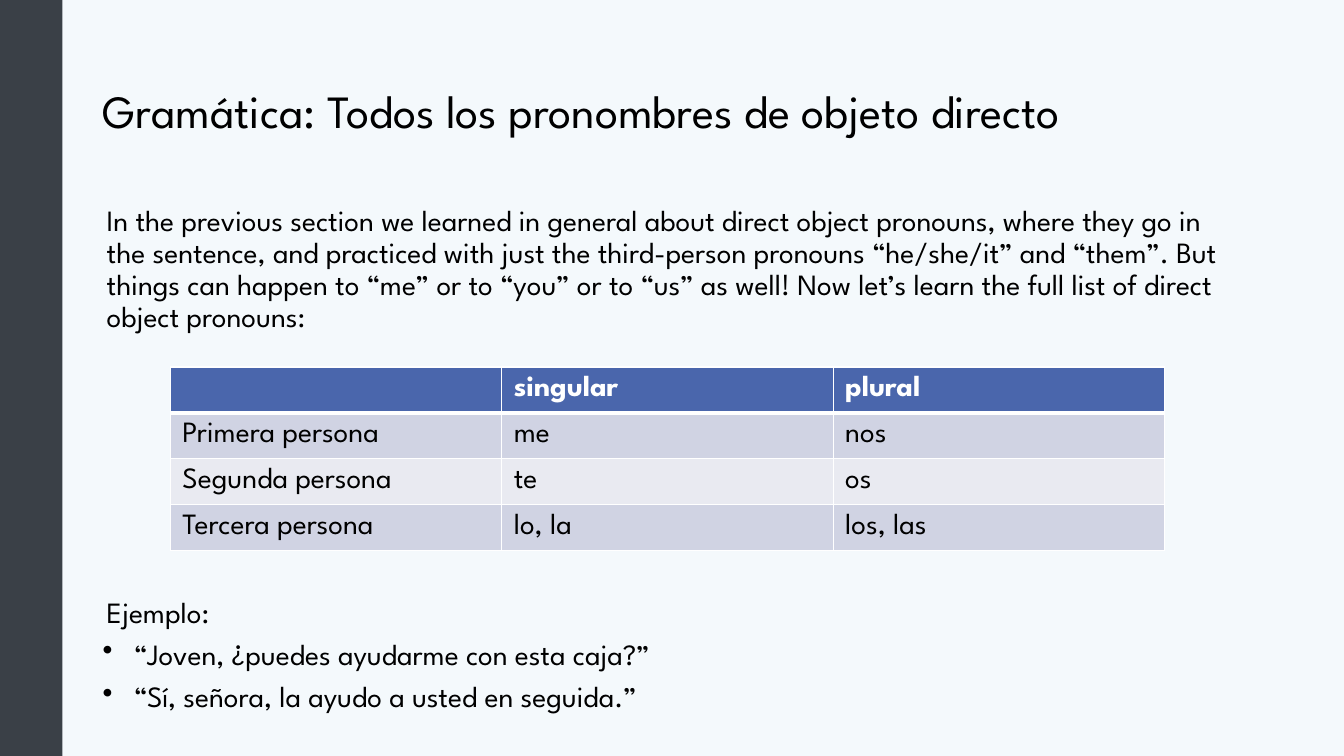
from lxml import etree
from pptx import Presentation
from pptx.dml.color import RGBColor
from pptx.enum.shapes import MSO_SHAPE as Shape
from pptx.enum.text import MSO_ANCHOR as Anchor
from pptx.oxml.ns import qn
from pptx.util import Inches, Pt

FONT = "League Spartan"
COLORS = {
    "background": "F4F9FC",
    "sidebar": "3A4047",
    "text": "000000",
    "header": "4A66AC",
    "odd row": "D0D3E3",
    "even row": "E9EAF1",
    "white": "FFFFFF",
}


def style(paragraph, size, color="text", bold=False):
    paragraph.font.name = FONT
    paragraph.font.size = Pt(size)
    paragraph.font.bold = bold
    paragraph.font.color.rgb = RGBColor.from_string(COLORS[color])


def add_text(top, height, lines, size, anchor=Anchor.TOP):
    box = slide.shapes.add_textbox(Inches(0.92), Inches(top), Inches(11.5), Inches(height))
    frame = box.text_frame
    frame.word_wrap = True
    frame.vertical_anchor = anchor
    frame.text = "\n".join(lines)
    for paragraph in frame.paragraphs:
        style(paragraph, size)
        paragraph.line_spacing = 0.9
    return frame.paragraphs


presentation = Presentation()
presentation.slide_width = Inches(13.33)
presentation.slide_height = Inches(7.5)
slide = presentation.slides.add_slide(presentation.slide_layouts[6])

# Background and sidebar
slide.background.fill.solid()
slide.background.fill.fore_color.rgb = RGBColor.from_string(COLORS["background"])
sidebar = slide.shapes.add_shape(Shape.RECTANGLE, 0, 0, Inches(0.62), Inches(7.5))
sidebar.shadow.inherit = False
sidebar.fill.solid()
sidebar.fill.fore_color.rgb = RGBColor.from_string(COLORS["sidebar"])
sidebar.line.fill.background()

# Title and introduction
add_text(0.4, 1.45, ["Gramática:\u00a0Todos los pronombres de objeto directo".replace("\u00a0", " ")],
         33, Anchor.MIDDLE)
introduction = add_text(2, 1.4, [
    "In the previous section we learned in general about direct object pronouns, "
    "where they go in the sentence, and practiced with just the third-person pronouns "
    "“he/she/it” and “them”. But things can happen to “me” or to “you” or to “us” as well! "
    "Now let’s learn the full list of direct object pronouns:"], 21)

# Examples: a heading and two bullets
examples = add_text(5.88, 1.3, [
    "Ejemplo:",
    "“Joven, ¿puedes ayudarme con esta caja?”",
    "“Sí, señora, la ayudo a usted en seguida.”"], 21)
for paragraph in (introduction[0], examples[0]):
    paragraph._p.get_or_add_pPr().set("marL", str(Inches(0.04)))
for paragraph in examples[1:]:
    paragraph.space_before = Pt(7.5)
    properties = paragraph._p.get_or_add_pPr()
    properties.set("marL", str(Inches(0.31)))
    properties.set("indent", str(-Inches(0.31)))
    bullet = etree.Element(qn("a:buChar"), char="•")
    properties.find(qn("a:defRPr")).addprevious(bullet)

# Pronoun table
pronouns = [
    ["", "singular", "plural"],
    ["Primera persona", "me", "nos"],
    ["Segunda persona", "te", "os"],
    ["Tercera persona", "lo, la", "los, las"],
]
table = slide.shapes.add_table(4, 3, Inches(1.69), Inches(3.64),
                               Inches(9.86), Inches(1.82)).table
for row, words in enumerate(pronouns):
    fill = "header" if row == 0 else "odd row" if row % 2 else "even row"
    for column, word in enumerate(words):
        cell = table.cell(row, column)
        cell.text = word
        cell.vertical_anchor = Anchor.MIDDLE
        cell.margin_left = cell.margin_right = Inches(0.12)
        cell.margin_top = cell.margin_bottom = Inches(0.04)
        style(cell.text_frame.paragraphs[0], 21, "text" if row else "white", row == 0)

        # Borders come before the fill, with a thick rule under the header
        widths = {"lnL": 1, "lnR": 1, "lnT": 3 if row == 1 else 1, "lnB": 1 if row else 3}
        for side, width in widths.items():
            border = etree.SubElement(cell._tc.get_or_add_tcPr(), qn(f"a:{side}"), w=str(Pt(width)))
            solid = etree.SubElement(border, qn("a:solidFill"))
            etree.SubElement(solid, qn("a:srgbClr"), val=COLORS["white"])
        cell.fill.solid()
        cell.fill.fore_color.rgb = RGBColor.from_string(COLORS[fill])

presentation.save("out.pptx")
